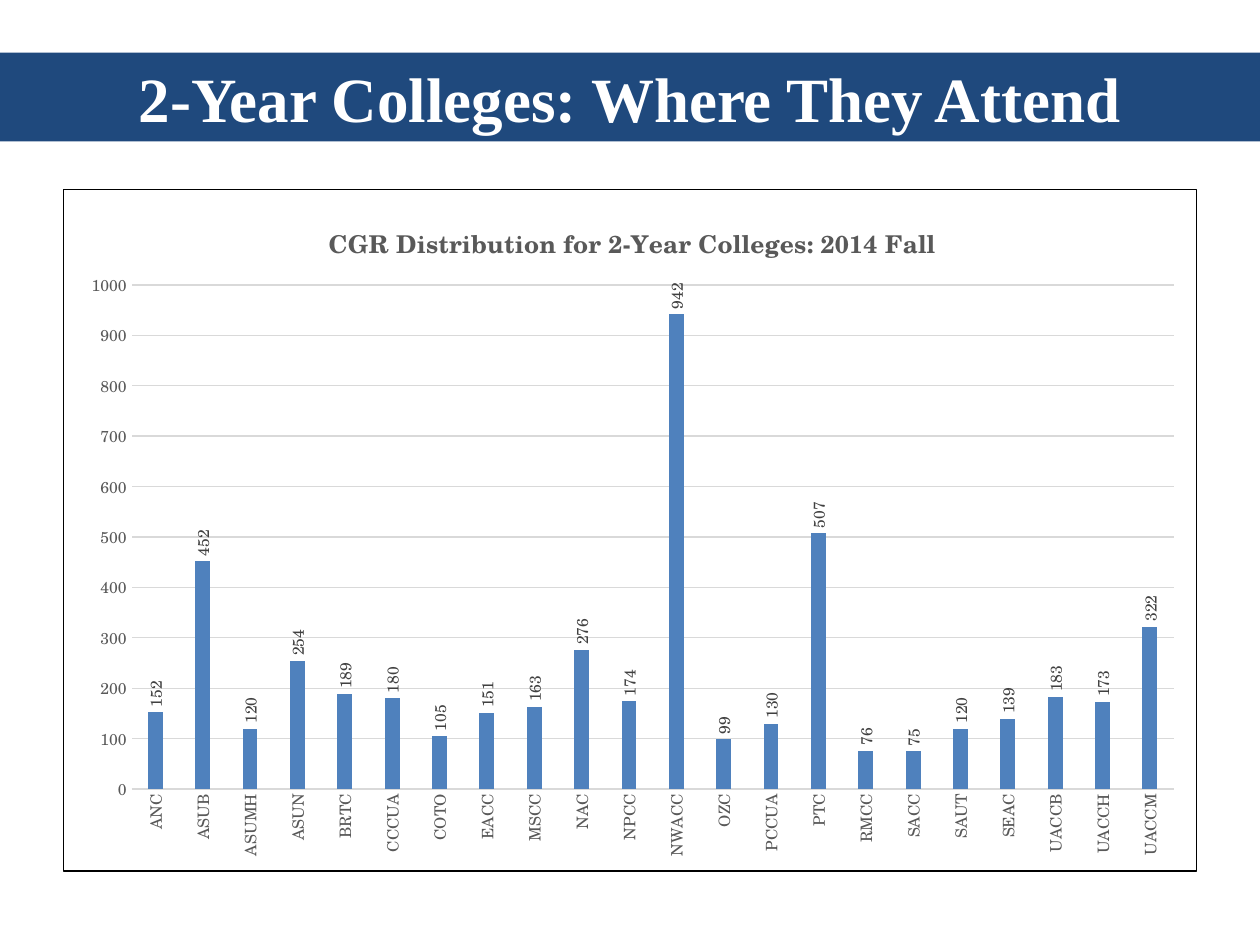
from lxml import etree
from pptx import Presentation
from pptx.chart.data import CategoryChartData
from pptx.dml.color import RGBColor
from pptx.enum.chart import XL_CHART_TYPE, XL_LABEL_POSITION, XL_TICK_MARK
from pptx.enum.shapes import MSO_SHAPE
from pptx.enum.text import MSO_ANCHOR, PP_ALIGN
from pptx.oxml import parse_xml
from pptx.oxml.ns import nsdecls, qn
from pptx.util import Cm, Pt

COLUMNS = XL_CHART_TYPE.COLUMN_CLUSTERED
OUTSIDE = XL_LABEL_POSITION.OUTSIDE_END
NO_TICK = XL_TICK_MARK.NONE
RECT = MSO_SHAPE.RECTANGLE
MIDDLE = MSO_ANCHOR.MIDDLE
CENTER = PP_ALIGN.CENTER
SERIF, SCHOOL = "Times New Roman", "TeX Gyre Schola"
GRAY, LIGHT = "595959", "D9D9D9"

rgb = RGBColor.from_string


def add_text(tf, text, font=SCHOOL, size=10, color=GRAY, bold=False):
    p = tf.paragraphs[0]
    p.alignment = CENTER
    r = p.add_run()
    r.text = text
    r.font.name, r.font.size, r.font.bold = font, Pt(size), bold
    r.font.color.rgb = rgb(color)


def set_layout(parent, index, target="", **box):
    old = parent.find(qn("c:layout"))
    if old is not None:
        parent.remove(old)
    layout = parse_xml(f"<c:layout {nsdecls('c')}><c:manualLayout/></c:layout>")
    values = {"layoutTarget": target} if target else {}
    values.update(xMode="edge", yMode="edge", **box)
    for tag, value in values.items():
        etree.SubElement(layout[0], qn(f"c:{tag}")).set("val", str(value))
    parent.insert(index, layout)


prs = Presentation()
prs.slide_width, prs.slide_height = Cm(25.4), Cm(19.05)
s = prs.slides.add_slide(prs.slide_layouts[6])

# Title band
sp = s.shapes.add_shape(RECT, 0, Cm(1.06), prs.slide_width, Cm(1.79))
sp.shadow.inherit = False
sp.fill.solid()
sp.fill.fore_color.rgb = rgb("1F497D")
sp.line.fill.background()
tf = sp.text_frame
tf.word_wrap = True
tf.vertical_anchor = MIDDLE
add_text(tf, "2-Year Colleges: Where They Attend", font=SERIF, size=36,
         color="FFFFFF", bold=True)

# Chart data
students = {
    "ANC": 152, "ASUB": 452, "ASUMH": 120, "ASUN": 254, "BRTC": 189,
    "CCCUA": 180, "COTO": 105, "EACC": 151, "MSCC": 163, "NAC": 276,
    "NPCC": 174, "NWACC": 942, "OZC": 99, "PCCUA": 130, "PTC": 507,
    "RMCC": 76, "SACC": 75, "SAUT": 120, "SEAC": 139, "UACCB": 183,
    "UACCH": 173, "UACCM": 322,
}
data = CategoryChartData()
data.categories = list(students)
data.add_series("Series 1", list(students.values()))
chart = s.shapes.add_chart(COLUMNS, Cm(1.27), Cm(3.81), Cm(22.86), Cm(13.76),
                           data).chart
chart.has_legend = False
chart.font.name, chart.font.size = SCHOOL, Pt(10)
chart.font.color.rgb = rgb("000000")

# Chart title
chart.has_title = True
title = chart.chart_title
add_text(title.text_frame, "CGR Distribution for 2-Year Colleges: 2014 Fall",
         size=14, bold=True)

# Columns and their labels
plot = chart.plots[0]
plot.gap_width, plot.overlap = 219, -27
plot.vary_by_categories = False
fill = plot.series[0].format.fill
fill.solid()
fill.fore_color.rgb = rgb("4F81BD")
plot.has_data_labels = True
labels = plot.data_labels
labels.show_value = True
labels.position = OUTSIDE

# Axes
cat_axis, val_axis = chart.category_axis, chart.value_axis
for axis in (cat_axis, val_axis):
    axis.major_tick_mark = axis.minor_tick_mark = NO_TICK
val_axis.minimum_scale, val_axis.maximum_scale = 0, 1000
val_axis.major_unit = 100
val_axis.format.line.fill.background()
for line in (cat_axis.format.line, val_axis.major_gridlines.format.line):
    line.color.rgb = rgb(LIGHT)
    line.width = Pt(0.75)

for font, color in ((labels.font, "404040"), (cat_axis.tick_labels.font, GRAY),
                    (val_axis.tick_labels.font, GRAY)):
    font.name, font.size, font.bold = SCHOOL, Pt(9), False
    font.color.rgb = rgb(color)

# Upright text for data labels and categories
space = chart.element
for body in space.xpath(".//c:dLbls/c:txPr/a:bodyPr | .//c:catAx/c:txPr/a:bodyPr"):
    body.set("rot", "-5400000")
    body.set("vert", "horz")

# Places of the title and the plot
set_layout(title.element, 1, x=0.23, y=0.04)
set_layout(space.xpath("c:chart/c:plotArea")[0], 0, "inner",
           x=0.06, y=0.14, w=0.92, h=0.74)

# Chart frame
space.find(qn("c:txPr")).addprevious(parse_xml(
    f"<c:spPr {nsdecls('c', 'a')}><a:noFill/><a:ln w='{Pt(0.75)}'><a:solidFill>"
    "<a:srgbClr val='000000'/></a:solidFill></a:ln></c:spPr>"))

prs.save("out.pptx")
